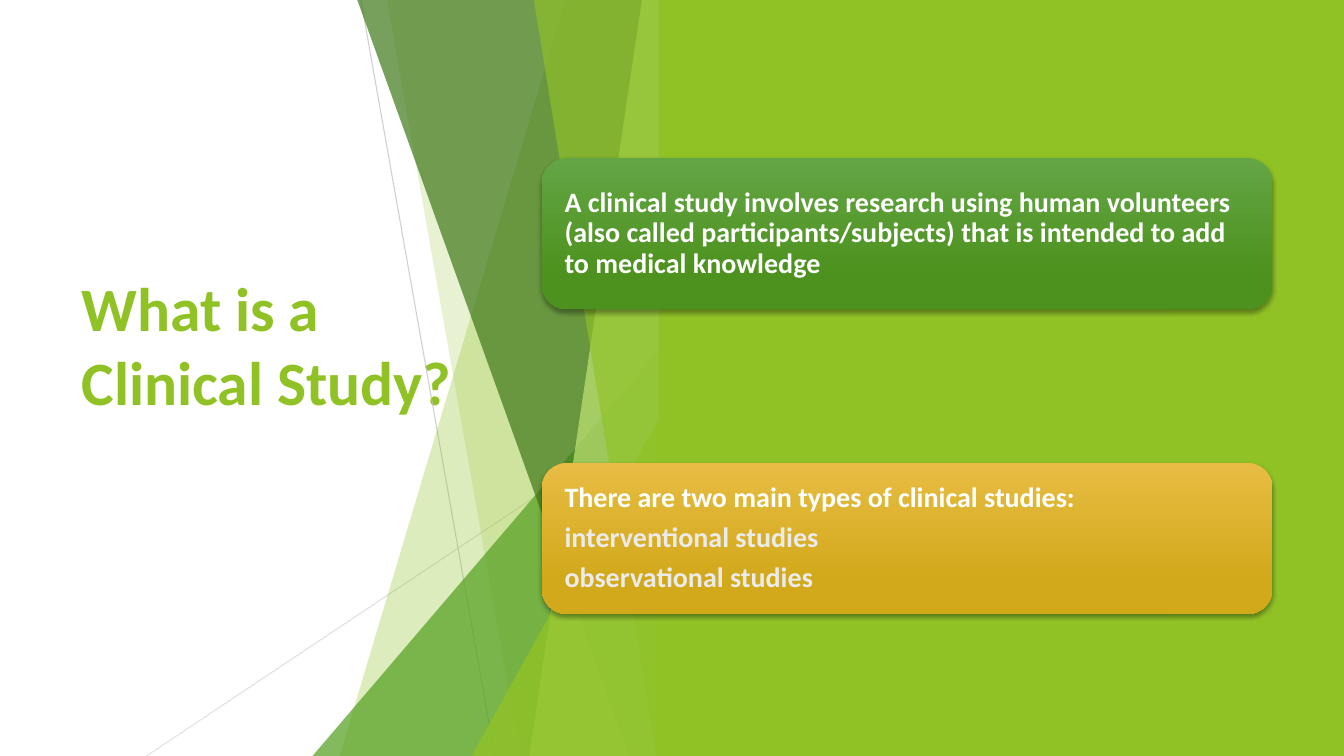
from dataclasses import dataclass

import lxml.etree
import pptx
import pptx.dml.color
import pptx.enum.shapes
import pptx.enum.text
import pptx.oxml.ns
import pptx.util

Pt = pptx.util.Pt
qn = pptx.oxml.ns.qn
MSO_SHAPE = pptx.enum.shapes.MSO_SHAPE

FONT = "Calibri"
SLIDE_WIDTH, SLIDE_HEIGHT = 960, 540
FACET_TOP = -0.6
FACET_RIGHT = 479.6
PANEL_LEFT = 470.6
CARD_LEFT, CARD_WIDTH, CARD_HEIGHT = 387, 522, 108
LIME = "90C226"
WHITE = "FFFFFF"


@dataclass
class Ray:
    start: tuple[float, float]
    end: tuple[float, float]
    color: str
    opacity: int


@dataclass
class Facet:
    top_left: float
    bottom_left: float
    color: str
    opacity: int


@dataclass
class Wedge:
    left: float
    top: float
    color: str
    opacity: int


@dataclass
class Card:
    top: float
    top_color: str
    bottom_color: str
    lines: list[tuple[str, str]]


RAYS = [
    Ray((257.8, 0), (353.5, SLIDE_HEIGHT), "BFBFBF", 75),
    Ray((FACET_RIGHT, 290), (104.6, SLIDE_HEIGHT), "D9D9D9", 80),
]

FACETS = [
    Facet(404, 242.6, LIME, 30),
    Facet(276.3, 371.7, LIME, 20),
    Wedge(223.2, 240, "54A021", 72),
    Facet(255, 449.3, "3F7819", 70),
    Facet(458.6, 378.1, "C0E474", 70),
    Facet(381.3, 468.9, LIME, 65),
    Wedge(336.8, 283, LIME, 80),
]

CARDS = [
    Card(113, "63A545", "4D921E", [
        ("A clinical study involves research using human volunteers "
         "(also called participants/subjects) that is intended to add to "
         "medical knowledge", WHITE),
    ]),
    Card(330.6, "E7BC43", "D2A91B", [
        ("There are two main types of clinical studies:", WHITE),
        ("interventional studies", "EBEBEB"),
        ("observational studies", "EBEBEB"),
    ]),
]


def rgb(color: str) -> pptx.dml.color.RGBColor:
    return pptx.dml.color.RGBColor.from_string(color)


def set_opacity(shape, opacity: int) -> None:
    color = next(shape._element.spPr.iter(qn("a:srgbClr")))
    lxml.etree.SubElement(color, qn("a:alpha"), val=str(opacity * 1000))


def paint(shape, color: str, opacity: int = 100) -> None:
    shape.fill.solid()
    shape.fill.fore_color.rgb = rgb(color)
    shape.line.fill.background()
    shape.shadow.inherit = False
    if opacity < 100:
        set_opacity(shape, opacity)


def add_title(slide, text: str) -> None:
    title = slide.shapes.title
    title.left, title.top = Pt(51), Pt(108.7)
    title.width, title.height = Pt(279.5), Pt(322.6)
    frame = title.text_frame
    frame.text = text
    frame.word_wrap = True
    frame.auto_size = pptx.enum.text.MSO_AUTO_SIZE.NONE
    frame.vertical_anchor = pptx.enum.text.MSO_ANCHOR.MIDDLE
    frame.margin_right = Pt(2)
    frame.margin_bottom = Pt(53)
    paragraph = frame.paragraphs[0]
    paragraph.alignment = pptx.enum.text.PP_ALIGN.LEFT
    paragraph.font.name = FONT
    paragraph.font.size = Pt(44)
    paragraph.font.bold = True
    paragraph.font.color.rgb = rgb(LIME)


def add_ray(slide, ray: Ray) -> None:
    connector = slide.shapes.add_connector(
        pptx.enum.shapes.MSO_CONNECTOR.STRAIGHT,
        *map(Pt, ray.start + ray.end))
    connector.line.color.rgb = rgb(ray.color)
    connector.line.width = Pt(0.75)
    set_opacity(connector, ray.opacity)
    lxml.etree.SubElement(connector._element.spPr, qn("a:effectLst"))


def add_facet(slide, facet: Facet | Wedge) -> None:
    if isinstance(facet, Wedge):
        shape = slide.shapes.add_shape(
            MSO_SHAPE.ISOSCELES_TRIANGLE, Pt(facet.left), Pt(facet.top),
            Pt(FACET_RIGHT - facet.left), Pt(SLIDE_HEIGHT - facet.top))
        shape.adjustments[0] = 1
    else:
        builder = slide.shapes.build_freeform(
            Pt(facet.top_left), Pt(FACET_TOP))
        builder.add_line_segments([
            (Pt(FACET_RIGHT), Pt(FACET_TOP)),
            (Pt(FACET_RIGHT), Pt(SLIDE_HEIGHT)),
            (Pt(facet.bottom_left), Pt(SLIDE_HEIGHT)),
        ])
        shape = builder.convert_to_shape()
    paint(shape, facet.color, facet.opacity)


def add_panel(slide) -> None:
    panel = slide.shapes.add_shape(
        MSO_SHAPE.RECTANGLE, Pt(PANEL_LEFT), Pt(0),
        Pt(SLIDE_WIDTH - PANEL_LEFT), Pt(SLIDE_HEIGHT))
    paint(panel, LIME)


def add_shadow(shape) -> None:
    shape.shadow.inherit = False
    effects = shape._element.spPr.find(qn("a:effectLst"))
    shadow = lxml.etree.SubElement(
        effects, qn("a:outerShdw"), blurRad=str(Pt(3)), dist=str(Pt(2)),
        dir="5400000", rotWithShape="0")
    color = lxml.etree.SubElement(shadow, qn("a:srgbClr"), val="000000")
    lxml.etree.SubElement(color, qn("a:alpha"), val="35000")


def add_card(slide, card: Card) -> None:
    shape = slide.shapes.add_shape(
        MSO_SHAPE.ROUNDED_RECTANGLE, Pt(CARD_LEFT), Pt(card.top),
        Pt(CARD_WIDTH), Pt(CARD_HEIGHT))
    shape.fill.gradient()
    shape.fill.gradient_angle = 270
    first, last = shape.fill.gradient_stops
    first.color.rgb, first.position = rgb(card.top_color), 0
    last.color.rgb, last.position = rgb(card.bottom_color), 0.78
    shape.line.fill.background()
    add_shadow(shape)

    frame = shape.text_frame
    frame.word_wrap = True
    frame.vertical_anchor = pptx.enum.text.MSO_ANCHOR.MIDDLE
    # Text insets are measured from the card's outer edge.
    frame.margin_left = frame.margin_right = Pt(11)
    frame.margin_top = frame.margin_bottom = Pt(11)
    frame.text = "\n".join(text for text, _ in card.lines)
    for paragraph, (_, color) in zip(frame.paragraphs, card.lines):
        paragraph.alignment = pptx.enum.text.PP_ALIGN.LEFT
        paragraph.line_spacing = 0.9
        paragraph.space_after = Pt(7)
        paragraph.font.name = FONT
        paragraph.font.size = Pt(20)
        paragraph.font.bold = True
        paragraph.font.color.rgb = rgb(color)


def main() -> None:
    presentation = pptx.Presentation()
    presentation.slide_width = Pt(SLIDE_WIDTH)
    presentation.slide_height = Pt(SLIDE_HEIGHT)
    slide = presentation.slides.add_slide(presentation.slide_layouts[5])
    add_title(slide, "What is a Clinical Study?")
    for ray in RAYS:
        add_ray(slide, ray)
    for facet in FACETS:
        add_facet(slide, facet)
    add_panel(slide)
    for card in CARDS:
        add_card(slide, card)
    presentation.save("out.pptx")


if __name__ == "__main__":
    main()
